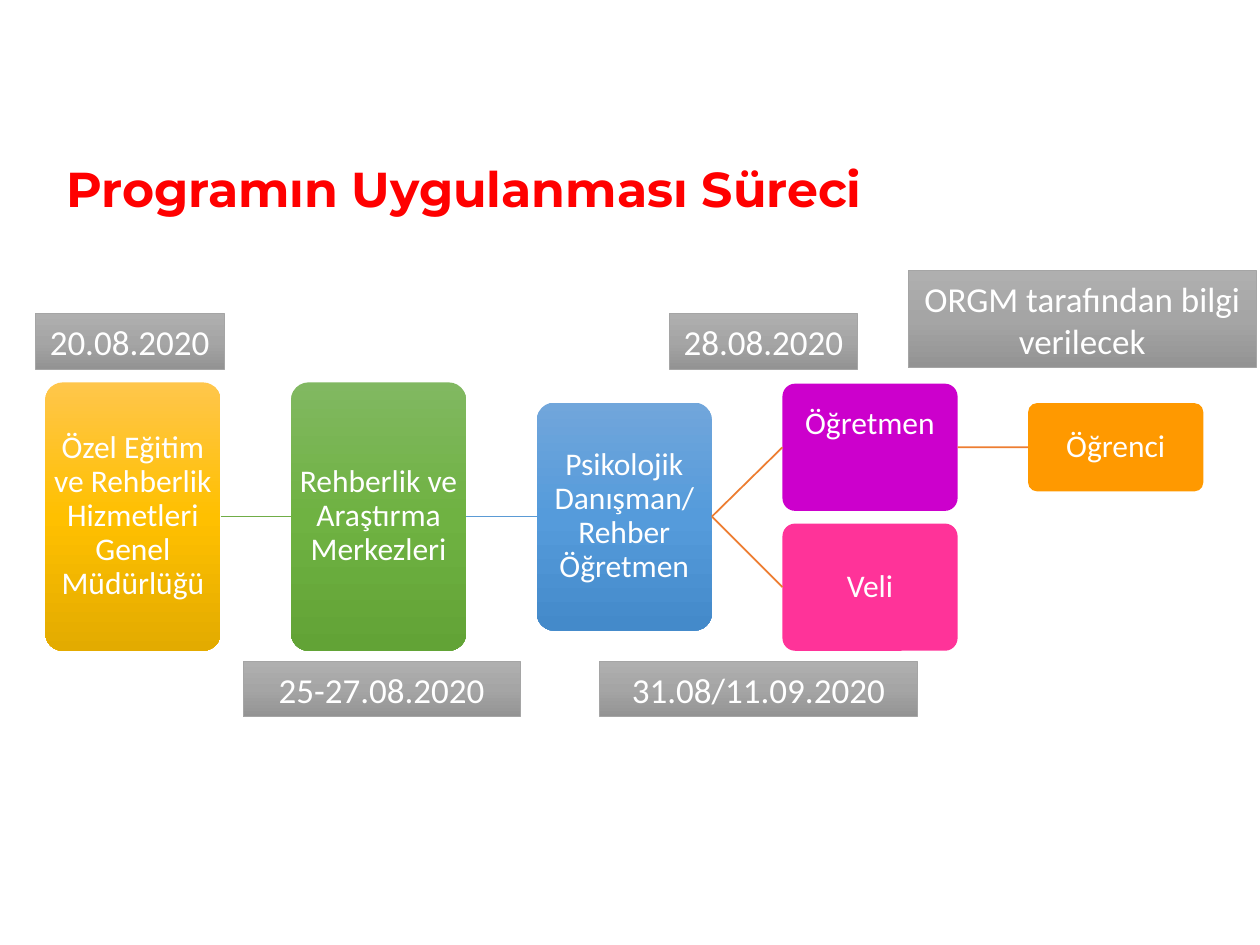
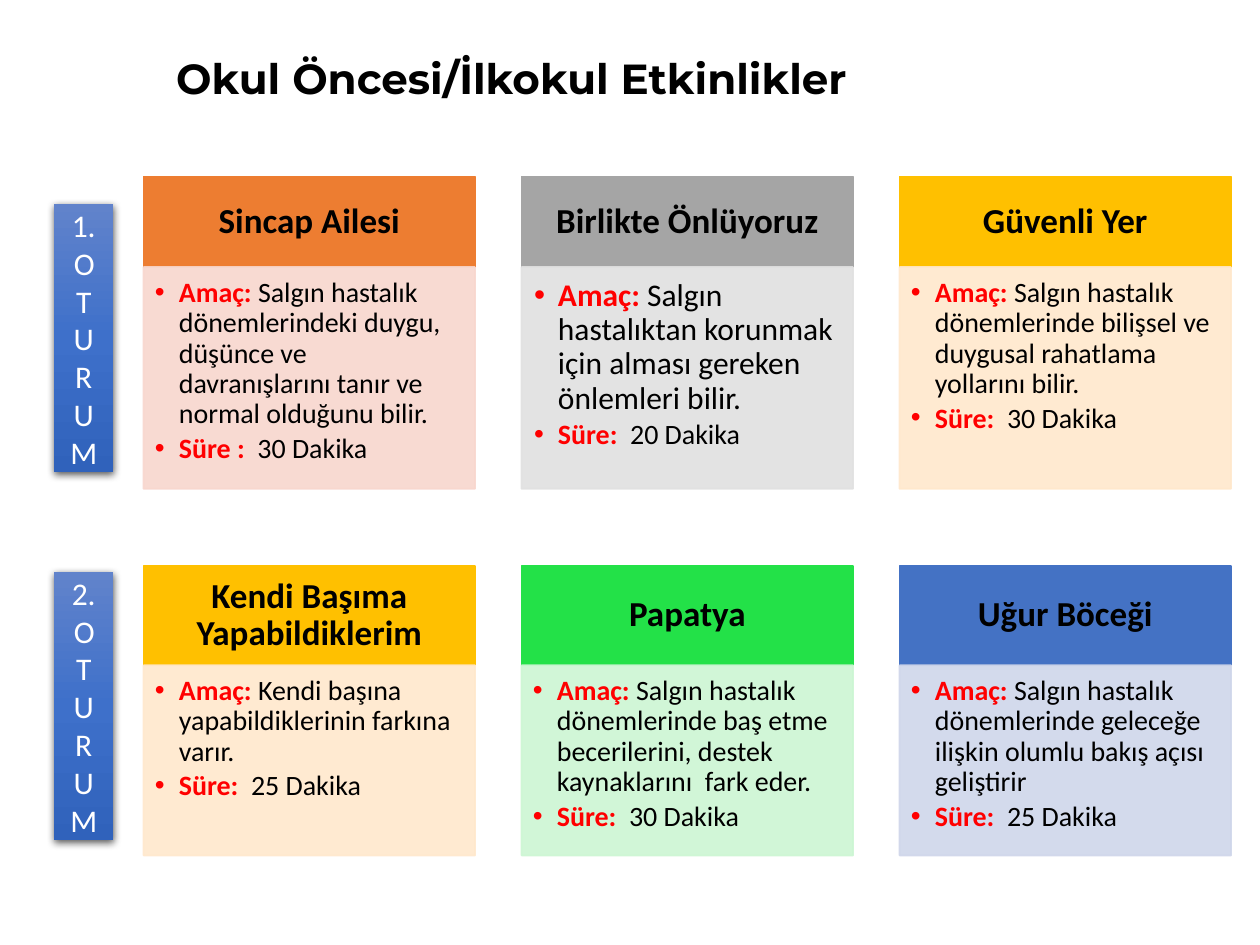
from copy import deepcopy

from lxml import etree
from pptx import Presentation
from pptx.dml.color import RGBColor
from pptx.enum.shapes import MSO_CONNECTOR as CONNECTOR, MSO_SHAPE as SHAPE
from pptx.enum.text import MSO_ANCHOR as ANCHOR, PP_ALIGN as ALIGN
from pptx.oxml.ns import qn
from pptx.util import Inches, Pt

BODY_FONT, TITLE_FONT = "Calibri", "Montserrat"
WHITE, BLACK, RED, ORANGE = "FFFFFF", "000000", "FF0000", "ED7D31"
GRAY_SHADES = ("AFAFAF", "A5A5A5", "939393")
BLUE_SHADES = ("6183CB", "3E70CA", "3062BB")
BOTTOM, LEFT, RIGHT = 2, 1, 3
DEFAULT_INSETS = (0.1, 0.05, 0.1, 0.05)

# Process slide: column, centre height, height, fill, text, bottom inset
PROCESS_TITLE = "Programın Uygulanması Süreci"
STEPS = {
    "directorate": (0, 4.1, 2.13, ("FFC64B", "FFC000", "E3AB00"),
                    "Özel Eğitim ve Rehberlik Hizmetleri Genel Müdürlüğü", 0.01),
    "centres": (1, 4.1, 2.13, ("81B861", "6FB242", "62A336"),
                "Rehberlik ve Araştırma Merkezleri", 0.01),
    "counsellor": (2, 4.1, 1.81, ("71A6DB", "559BDB", "448ACA"),
                   "Psikolojik Danışman/ Rehber Öğretmen", 0.01),
    "teacher": (3, 3.55, 1.01, "CC00CC", "Öğretmen", 0.37),
    "parent": (3, 4.66, 1.01, "FF3399", "Veli", 0.01),
    "student": (4, 3.55, 0.7, "FF9900", "Öğrenci", 0.01),
}
LINKS = [
    ("directorate", "centres", "70AD47"),
    ("centres", "counsellor", "5B9BD5"),
    ("counsellor", "teacher", ORANGE),
    ("counsellor", "parent", ORANGE),
    ("teacher", "student", ORANGE),
]
STEP_LEFT, STEP_PITCH, STEP_WIDTH = 0.36, 1.95, 1.39
NOTES = [
    ("20.08.2020", (0.28, 2.49, 1.5, 0.44)),
    ("25-27.08.2020", (1.93, 5.25, 2.2, 0.44)),
    ("28.08.2020", (5.31, 2.49, 1.5, 0.44)),
    ("31.08/11.09.2020", (4.76, 5.25, 2.52, 0.44)),
    ("ORGM tarafından bilgi verilecek", (7.21, 2.15, 2.76, 0.77)),
]

# Activity slide: name, header fill, body fill, aim, aim size, duration label, duration
ACTIVITY_TITLE = "Okul Öncesi/İlkokul Etkinlikler"
SESSIONS = [
    dict(label="1. OTURUM", label_top=1.62, top=1.4, header=0.72, body=1.76, cards=[
        ("Sincap Ailesi", ORANGE, "F8D7CE",
         "Salgın hastalık dönemlerindeki duygu, düşünce ve davranışlarını tanır "
         "ve normal olduğunu bilir.", 16, "Süre :  ", "30 Dakika"),
        ("Birlikte Önlüyoruz", "A5A5A5", "E1E1E1",
         "Salgın hastalıktan korunmak için alması gereken önlemleri bilir.",
         18, "Süre:  ", "20 Dakika"),
        ("Güvenli Yer", "FFC000", "FFE8CC",
         "Salgın hastalık dönemlerinde bilişsel ve duygusal rahatlama yollarını bilir.",
         16, "Süre:  ", "30 Dakika"),
    ]),
    dict(label="2. OTURUM", label_top=4.54, top=4.49, header=0.79, body=1.51, cards=[
        ("Kendi Başıma Yapabildiklerim", "FFC000", "FFE8CC",
         "Kendi başına yapabildiklerinin farkına varır.", 16, "Süre:  ", "25 Dakika"),
        ("Papatya", "23E148", "CCF6D3",
         "Salgın hastalık dönemlerinde baş etme becerilerini, destek kaynaklarını  fark eder.",
         16, "Süre:  ", "30 Dakika"),
        ("Uğur Böceği", "4472C4", "CFD6EA",
         "Salgın hastalık dönemlerinde geleceğe ilişkin olumlu bakış açısı geliştirir",
         16, "Süre:  ", "25 Dakika"),
    ]),
]
CARD_LEFT, CARD_PITCH, CARD_WIDTH = 1.14, 3, 2.63
CARD_INSETS = {16: (0.09, 0.09, 0.12, 0.14), 18: (0.1, 0.1, 0.14, 0.16)}


def rgb(color):
    return RGBColor.from_string(color)


def add_element(parent, tag, **attributes):
    element = etree.SubElement(parent, qn(tag))
    for name, value in attributes.items():
        element.set(name, str(value))
    return element


def write(shape, paragraphs, size=18, color=WHITE, bold=False, font=BODY_FONT,
          align=ALIGN.CENTER, anchor=ANCHOR.MIDDLE, insets=DEFAULT_INSETS,
          spacing=0.9, after=0, bullet=False):
    """Write a string, or a list of paragraphs made of (text, run format) pairs."""
    if isinstance(paragraphs, str):
        paragraphs = [[(paragraphs, {})]]
    frame = shape.text_frame
    frame.word_wrap = True
    frame.vertical_anchor = anchor
    (frame.margin_left, frame.margin_top,
     frame.margin_right, frame.margin_bottom) = map(Inches, insets)
    for index, runs in enumerate(paragraphs):
        paragraph = frame.add_paragraph() if index else frame.paragraphs[0]
        paragraph.alignment = align
        paragraph.line_spacing = spacing
        paragraph.space_after = Pt(after)
        if bullet:
            properties = paragraph._p.get_or_add_pPr()
            properties.set("marL", str(Inches(0.19)))
            properties.set("indent", str(Inches(-0.19)))
            add_element(properties, "a:buFont", typeface="Arial")
            add_element(properties, "a:buChar", char="•")
        for text, style in runs:
            run = paragraph.add_run()
            run.text = text
            run.font.name = font
            run.font.size = Pt(style.get("size", size))
            run.font.bold = style.get("bold", bold)
            run.font.color.rgb = rgb(style.get("color", color))


def fill_gradient(shape, shades):
    shape.fill.gradient()
    shape.fill.gradient_angle = 270
    stops = shape._element.spPr.find(".//" + qn("a:gsLst"))
    stops.append(deepcopy(stops[-1]))
    for stop, shade, position in zip(shape.fill.gradient_stops, shades, (0, 0.5, 1)):
        stop.color.rgb = rgb(shade)
        stop.position = position


def add_box(slide, place, fill, line=None, line_width=1, kind=SHAPE.RECTANGLE, opacity=100):
    """Add a shape; a tuple of colours as fill makes a vertical gradient."""
    shape = slide.shapes.add_shape(kind, *map(Inches, place))
    shape.shadow.inherit = False
    if isinstance(fill, tuple):
        fill_gradient(shape, fill)
    else:
        shape.fill.solid()
        shape.fill.fore_color.rgb = rgb(fill)
    if line:
        shape.line.color.rgb = rgb(line)
        shape.line.width = Pt(line_width)
    else:
        shape.line.fill.background()
    if opacity < 100:
        for color in shape._element.spPr.iter(qn("a:srgbClr")):
            add_element(color, "a:alpha", val=opacity * 1000)
    return shape


def add_drop_shadow(shape):
    effects = shape._element.spPr.find(qn("a:effectLst"))
    shadow = add_element(effects, "a:outerShdw", blurRad=Pt(4.5), dist=Pt(1.5),
                         dir=90 * 60000, algn="ctr", rotWithShape=0)
    color = add_element(shadow, "a:srgbClr", val=BLACK)
    add_element(color, "a:alpha", val=63000)


def add_title(slide, text, place, size, color):
    box = slide.shapes.add_textbox(*map(Inches, place))
    write(box, text, size=size, color=color, bold=True, font=TITLE_FONT, align=ALIGN.LEFT)


def add_link(slide, start, end, color):
    link = slide.shapes.add_connector(CONNECTOR.STRAIGHT, 0, 0, 0, 0)
    link.begin_connect(start, RIGHT)
    link.end_connect(end, LEFT)
    link.line.color.rgb = rgb(color)
    link.line.width = Pt(1)
    add_element(link._element.spPr, "a:effectLst")


def build_process(slide):
    steps = {}
    for name, (column, middle, height, fill, text, bottom) in STEPS.items():
        place = (STEP_LEFT + column * STEP_PITCH, middle - height / 2, STEP_WIDTH, height)
        step = add_box(slide, place, fill, kind=SHAPE.ROUNDED_RECTANGLE)
        step.adjustments[0] = 0.1
        write(step, text, insets=(0.01, 0.01, 0.01, bottom))
        steps[name] = step
    for start, end, color in LINKS:
        add_link(slide, steps[start], steps[end], color)
    add_title(slide, PROCESS_TITLE, (0.43, 1.07, 8.66, 0.9), 28, RED)
    for text, place in NOTES:
        note = add_box(slide, place, GRAY_SHADES, line=GRAY_SHADES[1], line_width=0.5)
        write(note, text, size=20, spacing=1)


def add_card(slide, left, session, card):
    name, header_fill, body_fill, aim, aim_size, duration_label, duration = card
    top, header_height = session["top"], session["header"]
    header = add_box(slide, (left, top, CARD_WIDTH, header_height), header_fill, header_fill)
    write(header, name, size=20, color=BLACK, bold=True, insets=(0.16, 0.09, 0.16, 0.09))
    body = add_box(slide, (left, top + header_height, CARD_WIDTH, session["body"]),
                   body_fill, body_fill, opacity=90)
    label = dict(color=RED, bold=True)
    write(body, [[("Amaç: ", dict(label, size=aim_size)), (aim, dict(size=aim_size))],
                 [(duration_label, label), (duration, {})]],
          size=16, color=BLACK, align=ALIGN.LEFT, anchor=ANCHOR.TOP,
          insets=CARD_INSETS[aim_size], after=2.6, bullet=True)


def build_activities(slide):
    add_title(slide, ACTIVITY_TITLE, (1.3, 0.13, 6.54, 1.02), 24, BLACK)
    for session in SESSIONS:
        for column, card in enumerate(session["cards"]):
            add_card(slide, CARD_LEFT + column * CARD_PITCH, session, card)
        bar = add_box(slide, (0.43, session["label_top"], 0.47, 2.13), BLUE_SHADES)
        add_drop_shadow(bar)
        write(bar, session["label"], spacing=1)


def main():
    presentation = Presentation()
    presentation.slide_width, presentation.slide_height = Inches(10), Inches(7.5)
    for build in (build_process, build_activities):
        build(presentation.slides.add_slide(presentation.slide_layouts[6]))
    presentation.save("out.pptx")


if __name__ == "__main__":
    main()
